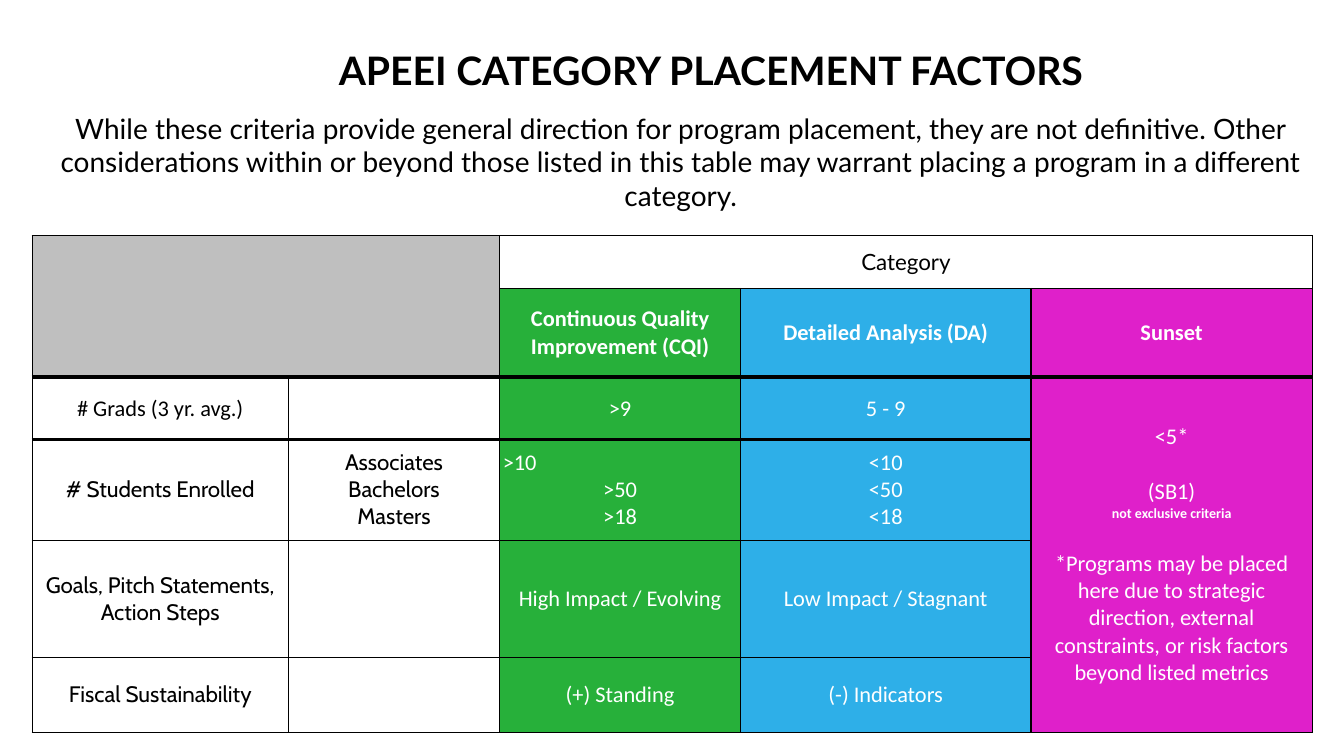
import pptx
import pptx.dml.color
import pptx.enum.text
import pptx.oxml
import pptx.oxml.ns
import pptx.util

Pt = pptx.util.Pt
ALIGN = pptx.enum.text.PP_ALIGN
ANCHOR = pptx.enum.text.MSO_ANCHOR
AUTO_SIZE = pptx.enum.text.MSO_AUTO_SIZE

BLACK, WHITE, GREY = "000000", "FFFFFF", "BFBFBF"
GREEN, BLUE, MAGENTA = "27B03A", "2EAFE8", "DF20CA"
INSETS = {f"margin_{side}": Pt(2.2) for side in ("left", "right", "top", "bottom")}


def colour(hex_string):
    return pptx.dml.color.RGBColor.from_string(hex_string)


def assign(target, values):
    for name, value in values.items():
        setattr(target, name, value)


class SlideBuilder:
    def __init__(self, slide, thin=1, thick=3):
        self.slide = slide
        self.thin = thin
        self.thick = thick

    def set_lines(self, frame, lines, font="Calibri", size=16, ink=BLACK, bold=False):
        for index, line in enumerate(lines):
            wording, changes = line if isinstance(line, tuple) else (line, {})
            paragraph = frame.paragraphs[0] if index == 0 else frame.add_paragraph()
            layout = {"alignment": ALIGN.CENTER, "space_before": Pt(0), "line_spacing": 1.0}
            assign(paragraph, layout | changes.get("paragraph", {}))
            run = paragraph.add_run()
            run.text = wording
            style = {"name": font, "size": Pt(size), "bold": bold}
            assign(run.font, style | changes.get("font", {}))
            run.font.color.rgb = colour(ink)

    def text(self, holder, place, wording, **style):
        assign(holder, dict(zip(("left", "top", "width", "height"), map(Pt, place))))
        frame_format = {"word_wrap": True, "vertical_anchor": ANCHOR.MIDDLE,
                        "auto_size": AUTO_SIZE.SHAPE_TO_FIT_TEXT}
        assign(holder.text_frame, INSETS | frame_format)
        self.set_lines(holder.text_frame, [wording], font="Lato", **style)

    def title(self, place, wording, **style):
        self.text(self.slide.shapes.title, place, wording, **style)

    def text_box(self, place, wording, **style):
        box = self.slide.shapes.add_textbox(*map(Pt, place))
        self.text(box, place, wording, **style)

    def table(self, left, top, widths, heights):
        frame = self.slide.shapes.add_table(
            len(heights), len(widths), Pt(left), Pt(top), Pt(sum(widths)), Pt(sum(heights)))
        grid = frame.table
        assign(grid, {"first_row": False, "horz_banding": False})
        for column, width in zip(grid.columns, widths):
            column.width = Pt(width)
        for row, height in zip(grid.rows, heights):
            row.height = Pt(height)
        return grid

    def cell(self, grid, row, column, lines=(), fill=None, span=(1, 1), heavy=(), **style):
        last_row, last_column = row + span[0] - 1, column + span[1] - 1
        origin = grid.cell(row, column)
        if span != (1, 1):
            origin.merge(grid.cell(last_row, last_column))
        assign(origin, INSETS | {"vertical_anchor": ANCHOR.MIDDLE})
        self.set_lines(origin.text_frame, lines, **style)
        for r in range(row, last_row + 1):
            for c in range(column, last_column + 1):
                part = grid.cell(r, c)
                if fill:
                    part.fill.solid()
                    part.fill.fore_color.rgb = colour(fill)
                else:
                    part.fill.background()
                outer = {"L": c == column, "R": c == last_column,
                         "T": r == row, "B": r == last_row}
                is_origin = (r, c) == (row, column)
                edges = {"T": row, "B": last_row + 1}
                sides = [side for side in outer if outer[side] or is_origin]
                self.borders(part, {side: self.thick if edges.get(side) in heavy else self.thin
                                    for side in sides})

    def borders(self, part, weights):
        properties = part._tc.get_or_add_tcPr()
        for index, (side, weight) in enumerate(weights.items()):
            line = pptx.oxml.parse_xml(
                f'<a:ln{side} {pptx.oxml.ns.nsdecls("a")} w="{int(Pt(weight))}">'
                f'<a:solidFill><a:srgbClr val="{BLACK}"/></a:solidFill>'
                f'<a:prstDash val="solid"/></a:ln{side}>')
            properties.insert(index, line)


def main():
    deck = pptx.Presentation()
    assign(deck, {"slide_width": Pt(960), "slide_height": Pt(540)})
    builder = SlideBuilder(deck.slides.add_slide(deck.slide_layouts[5]))

    criteria = builder.table(23, 168.5, [183, 151, 172, 207.5, 201],
                             [37.5, 63.5, 44.5, 72, 83.5, 54])
    heavy = (2, 3)
    builder.cell(criteria, 0, 0, fill=GREY, span=(2, 2), heavy=heavy)
    builder.cell(criteria, 0, 2, ["Category"], span=(1, 3), font="Lato")

    categories = [("Continuous Quality Improvement (CQI)", GREEN),
                  ("Detailed Analysis (DA)", BLUE), ("Sunset", MAGENTA)]
    for column, (category, fill) in enumerate(categories, 2):
        builder.cell(criteria, 1, column, [category], fill, heavy=heavy, ink=WHITE, bold=True)

    factors = [
        ("# Grads (3 yr. avg.)", [], [">9"], ["5 - 9"]),
        ("# Students Enrolled", ["Associates", "Bachelors", "Masters"],
         [(">10", {"paragraph": {"alignment": ALIGN.LEFT}}), ">50", ">18"],
         ["<10", "<50", "<18"]),
        ("Goals, Pitch Statements, Action Steps", [],
         ["High Impact / Evolving"], ["Low Impact / Stagnant"]),
        ("Fiscal Sustainability", [], ["(+) Standing"], ["(-) Indicators"]),
    ]
    for row, (factor, degrees, improvement, analysis) in enumerate(factors, 2):
        label_font = "Calibri" if row == 2 else "Cabin"
        builder.cell(criteria, row, 0, [factor], heavy=heavy, font=label_font)
        builder.cell(criteria, row, 1, degrees, heavy=heavy, font=label_font)
        builder.cell(criteria, row, 2, improvement, GREEN, heavy=heavy, ink=WHITE)
        builder.cell(criteria, row, 3, analysis, BLUE, heavy=heavy, ink=WHITE)

    gap = {"paragraph": {"space_before": Pt(19.5)}}
    sunset = [
        "<5*",
        ("(SB1)", gap),
        ("not exclusive criteria", {"font": {"size": Pt(10), "bold": True}}),
        ("*Programs may be placed here due to strategic direction, external constraints, "
         "or risk factors beyond listed metrics", gap),
    ]
    builder.cell(criteria, 2, 4, sunset, MAGENTA, span=(4, 1), heavy=heavy, ink=WHITE)

    builder.text_box(
        (36, 77, 900.5, 77),
        "While these criteria provide general direction for program placement, they are not "
        "definitive. Other considerations within or beyond those listed in this table may "
        "warrant placing a program in a different category.", size=20)
    builder.title((195, 31, 625.5, 38), "APEEI CATEGORY PLACEMENT FACTORS", size=28, bold=True)

    deck.save("out.pptx")


if __name__ == "__main__":
    main()
